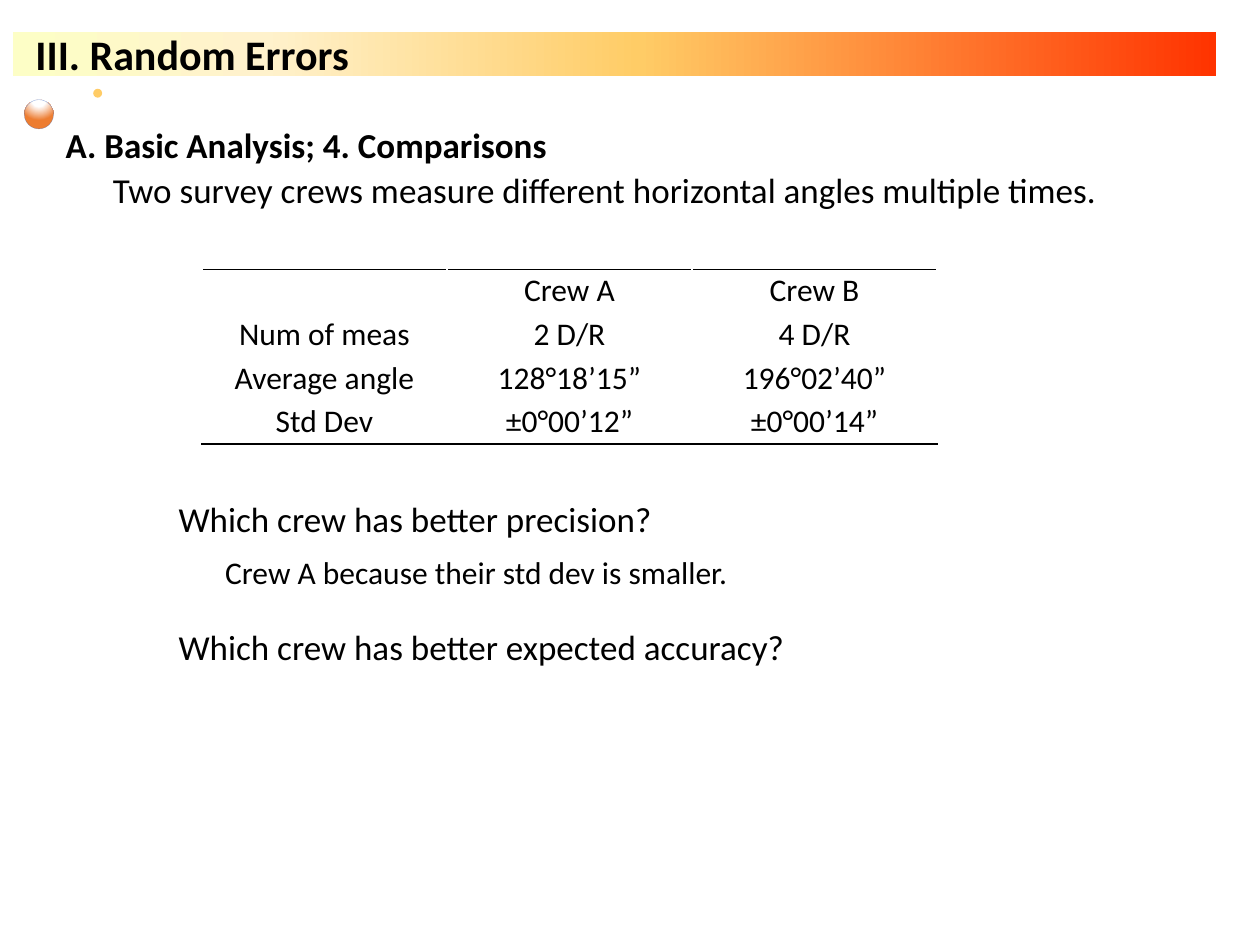
from dataclasses import dataclass
from typing import Any, NamedTuple

from lxml import etree
from pptx import Presentation, util as u
from pptx.dml.color import RGBColor
from pptx.enum import shapes, text
from pptx.oxml.ns import qn


@dataclass(frozen=True)
class Theme:
    font: str = "Calibri"
    ink: str = "000000"
    gold: str = "FFCC66"
    ball_edge: str = "3B6BC1"
    title: int = 24
    body: int = 20
    detail: int = 18
    bar: tuple = ((0, "FDFEC6"), (21, "FFF2CC"), (52, "FFCC66"), (100, "FF3300"))
    ball: tuple = ((0, "FFFFFF"), (35, "FFFFFF"), (100, "ED7D31"))


class Box(NamedTuple):
    left: float
    top: float
    width: float
    height: float

    def lengths(self) -> list:
        return [u.Cm(value) for value in self]


class Line(NamedTuple):
    words: str
    size: int
    bold: bool = False
    level: int = 0
    indent: float = 0
    format: dict = {}


THEME = Theme()
CREW_TABLE = (
    ("", "Crew A", "Crew B"),
    ("Num of meas", "2 D/R", "4 D/R"),
    ("Average angle", "128°18’15”", "196°02’40”"),
    ("Std Dev", "±0°00’12”", "±0°00’14”"),
)


def apply(target: Any, values: dict) -> None:
    for name, value in values.items():
        setattr(target, name, value)


def add_xml(parent: Any, tag: str, **attributes: Any) -> Any:
    return etree.SubElement(parent, qn(tag), {k: str(v) for k, v in attributes.items()})


def write_lines(frame: Any, lines: list[Line], **frame_format: Any) -> None:
    apply(frame, {"word_wrap": True, "auto_size": text.MSO_AUTO_SIZE.NONE} | frame_format)
    for number, line in enumerate(lines):
        paragraph = frame.add_paragraph() if number else frame.paragraphs[0]
        run = paragraph.add_run()
        run.text = line.words
        apply(run.font, {"name": THEME.font, "size": u.Pt(line.size), "bold": line.bold})
        run.font.color.rgb = RGBColor.from_string(THEME.ink)
        apply(paragraph, {"alignment": text.PP_ALIGN.LEFT, "level": line.level} | line.format)
        properties = paragraph._p.get_or_add_pPr()
        properties.set("marL", str(u.Cm(line.indent)))
        properties.set("indent", "0")
        add_xml(properties, "a:buNone")


def place(shape: Any, box: Box) -> None:
    apply(shape, dict(zip(("left", "top", "width", "height"), box.lengths())))


def add_ornament(slide: Any, kind: Any, box: Box, depth: int) -> Any:
    """Add a plain shape at the given depth behind the text."""
    shape = slide.shapes.add_shape(kind, *box.lengths())
    shape.shadow.inherit = False
    shape.line.fill.background()
    slide.shapes._spTree.insert(2 + depth, shape._element)
    return shape


def fill_gradient(shape: Any, stops: tuple, radial: bool = False) -> None:
    shape.fill.gradient()
    gradient = shape._element.spPr.find(qn("a:gradFill"))
    for child in list(gradient):
        gradient.remove(child)
    stop_list = add_xml(gradient, "a:gsLst")
    for position, colour in stops:
        add_xml(add_xml(stop_list, "a:gs", pos=position * 1000), "a:srgbClr", val=colour)
    if radial:
        circle = add_xml(gradient, "a:path", path="circle")
        add_xml(circle, "a:fillToRect", l=50000, t=-80000, r=50000, b=180000)
    else:
        add_xml(gradient, "a:lin", ang=0, scaled=0)


def rule_cell(cell: Any, tag: str) -> None:
    border = etree.Element(qn(tag), {"w": str(u.Pt(1))})
    add_xml(add_xml(border, "a:solidFill"), "a:srgbClr", val=THEME.ink)
    cell._tc.get_or_add_tcPr().insert(0, border)


def add_crew_table(slide: Any, box: Box) -> None:
    last = len(CREW_TABLE) - 1
    table = slide.shapes.add_table(last + 1, len(CREW_TABLE[0]), *box.lengths()).table
    apply(table, {"first_row": False, "horz_banding": False})
    margins = {f"margin_{side}": u.Cm(0.05) for side in ("left", "right", "top", "bottom")}
    centred = {"alignment": text.PP_ALIGN.CENTER}
    for row, entries in enumerate(CREW_TABLE):
        for column, words in enumerate(entries):
            cell = table.cell(row, column)
            apply(cell, margins)
            cell.fill.background()
            if words:
                write_lines(cell.text_frame, [Line(words, THEME.detail, format=centred)])
            if row == 0:
                rule_cell(cell, "a:lnT")
            if row == last:
                rule_cell(cell, "a:lnB")


def add_note(slide: Any, box: Box, lines: list[Line]) -> None:
    write_lines(slide.shapes.add_textbox(*box.lengths()).text_frame, lines)


def main() -> None:
    deck = Presentation()
    apply(deck, {"slide_width": u.Cm(25.4), "slide_height": u.Cm(19.05)})
    slide = deck.slides.add_slide(deck.slide_layouts[1])
    heading, body = slide.placeholders

    # Header bar, glossy ball and dot
    kinds = shapes.MSO_SHAPE
    bar = add_ornament(slide, kinds.RECTANGLE, Box(0.26, 0.64, 24.26, 0.9), 0)
    fill_gradient(bar, THEME.bar)
    ball = add_ornament(slide, kinds.OVAL, Box(0.49, 2.01, 0.59, 0.59), 1)
    fill_gradient(ball, THEME.ball, radial=True)
    ball.line.color.rgb = RGBColor.from_string(THEME.ball_edge)
    ball.line.width = u.Pt(0.16)
    edge_colour = ball.line._ln.find(".//" + qn("a:srgbClr"))
    add_xml(edge_colour, "a:alpha", val=60000)
    dot = add_ornament(slide, kinds.OVAL, Box(1.88, 1.79, 0.18, 0.18), 2)
    dot.fill.solid()
    dot.fill.fore_color.rgb = RGBColor.from_string(THEME.gold)

    # Title and introduction
    place(heading, Box(0.46, 0.44, 18.52, 1.28))
    write_lines(heading.text_frame, [Line("III. Random Errors", THEME.title, True)],
                vertical_anchor=text.MSO_ANCHOR.TOP)
    place(body, Box(1.07, 2.46, 21.9, 14.88))
    write_lines(body.text_frame, [
        Line("A. Basic Analysis; 4. Comparisons", THEME.body, True,
             format={"line_spacing": 0.9, "space_before": u.Pt(7.5)}),
        Line("Two survey crews measure different horizontal angles multiple times.",
             THEME.body, level=1, indent=0.95,
             format={"line_spacing": 0.9, "space_before": u.Pt(3.8)}),
    ])

    # Measurements
    add_crew_table(slide, Box(4.07, 5.43, 14.82, 3.52))

    # Questions, with room for the answer between them
    add_note(slide, Box(3.35, 9.91, 12.85, 3.68), [
        Line("Which crew has better precision?", THEME.body),
        Line("Which crew has better expected accuracy?", THEME.body,
             format={"space_before": u.Pt(48.8)}),
    ])
    add_note(slide, Box(4.29, 11.02, 14.53, 1.02),
             [Line("Crew A because their std dev is smaller.", THEME.detail)])

    deck.save("out.pptx")


if __name__ == "__main__":
    main()
